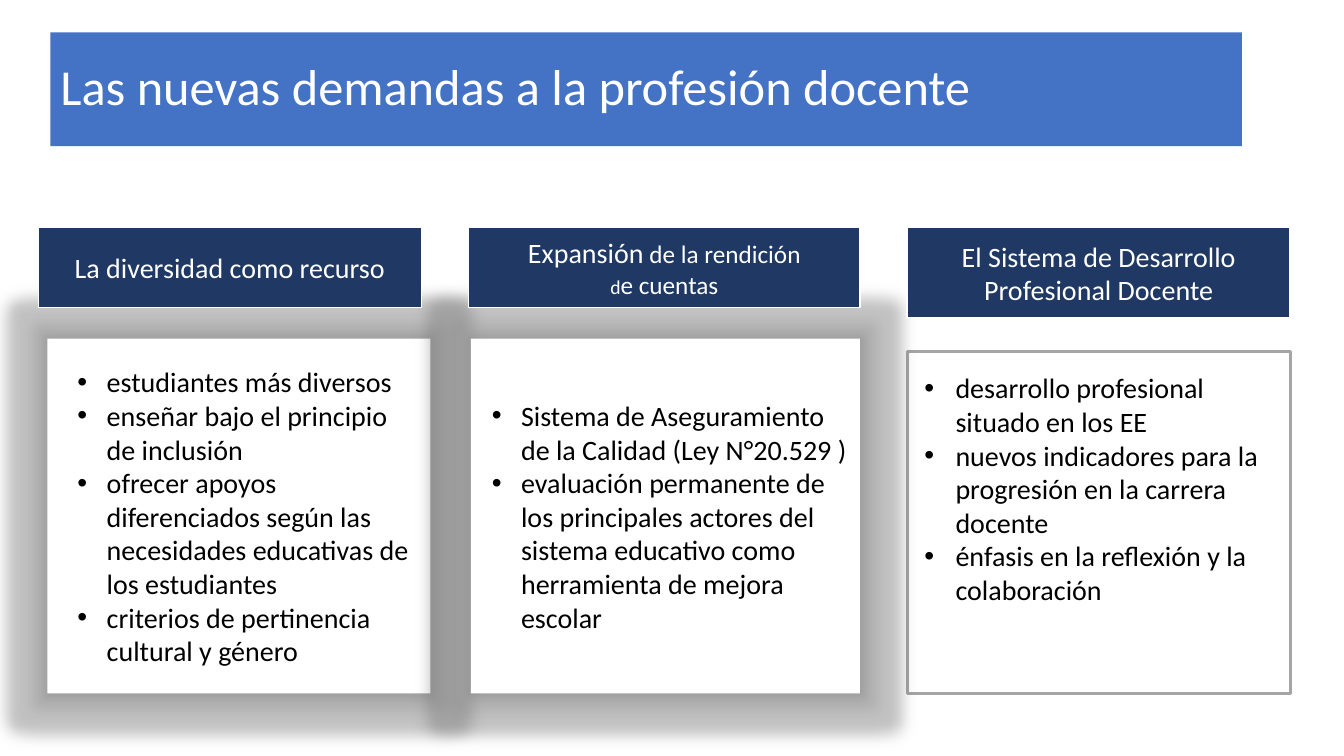
from dataclasses import dataclass
from typing import Optional

import lxml.etree
import pptx
import pptx.dml.color
import pptx.enum.shapes
import pptx.enum.text
import pptx.oxml
import pptx.oxml.ns
import pptx.shapes.autoshape
import pptx.text.text
import pptx.util

Align = pptx.enum.text.PP_ALIGN
Anchor = pptx.enum.text.MSO_ANCHOR

SLIDE_WIDTH = pptx.util.Inches(13.33)
SLIDE_HEIGHT = pptx.util.Inches(7.5)
FONT = "Calibri"
WHITE, BLACK, BLUE, NAVY, GRAY = "FFFFFF", "000000", "4472C4", "203864", "A5A5A5"
HEADER_TOP, CARD_TOP, CARD_HEIGHT = 30.13, 44.8, 46.93

HALO = f"""<a:effectLst {pptx.oxml.ns.nsdecls("a")}>
<a:glow rad="228600"><a:srgbClr val="{GRAY}"><a:alpha val="40000"/></a:srgbClr></a:glow>
<a:outerShdw blurRad="63500" sx="102000" sy="102000" algn="ctr" rotWithShape="0">
<a:srgbClr val="{BLACK}"><a:alpha val="40000"/></a:srgbClr></a:outerShdw>
</a:effectLst>"""


@dataclass(frozen=True)
class Area:
    """Position and size in percent of the slide's width and height."""

    left: float
    top: float
    width: float
    height: float

    def lengths(self) -> tuple[int, int, int, int]:
        return (
            round(SLIDE_WIDTH * self.left / 100),
            round(SLIDE_HEIGHT * self.top / 100),
            round(SLIDE_WIDTH * self.width / 100),
            round(SLIDE_HEIGHT * self.height / 100),
        )


@dataclass(frozen=True)
class Span:
    text: str
    size: float


@dataclass(frozen=True)
class Header:
    area: Area
    lines: list[list[Span]]


@dataclass(frozen=True)
class BulletList:
    area: Area
    margin: float
    hanging: float
    items: list[str]
    has_halo: bool = True


HEADERS = [
    Header(Area(2.85, HEADER_TOP, 28.5, 10.53), [[Span("La diversidad como recurso", 20)]]),
    Header(
        Area(34.88, HEADER_TOP, 29.1, 10.53),
        [
            [Span("Expansión", 20), Span(" de la rendición", 18)],
            [Span("d", 14), Span("e cuentas", 18)],
        ],
    ),
    Header(
        Area(67.5, HEADER_TOP, 28.5, 11.87),
        [[Span("El Sistema de Desarrollo Profesional Docente", 20)]],
    ),
]

BULLET_LISTS = [
    BulletList(
        Area(3.53, CARD_TOP, 28.5, CARD_HEIGHT), 0.49, 0.29,
        [
            "estudiantes más diversos",
            "enseñar bajo el principio de inclusión",
            "ofrecer apoyos diferenciados según las necesidades educativas de los estudiantes",
            "criterios de pertinencia cultural y género",
        ],
    ),
    BulletList(
        Area(35.03, CARD_TOP, 28.95, CARD_HEIGHT), 0.4, 0.29,
        [
            "Sistema de Aseguramiento de la Calidad (Ley N°20.529 )",
            "evaluación permanente de los principales actores del sistema educativo"
            " como herramienta de mejora escolar",
        ],
    ),
    BulletList(
        Area(68.03, 48.4, 28.05, 32.8), 0.31, 0.31,
        [
            "desarrollo profesional situado en los EE",
            "nuevos indicadores para la progresión en la carrera docente",
            "énfasis en la reflexión y la colaboración",
        ],
        has_halo=False,
    ),
]
FRAME = Area(67.5, 46.53, 28.5, 45.2)


def color(value: str) -> pptx.dml.color.RGBColor:
    return pptx.dml.color.RGBColor.from_string(value)


def add_box(
    page: pptx.slide.Slide,
    area: Area,
    fill: Optional[str] = None,
    line: Optional[str] = None,
    line_width: float = 1,
) -> pptx.shapes.autoshape.Shape:
    box = page.shapes.add_shape(pptx.enum.shapes.MSO_SHAPE.RECTANGLE, *area.lengths())
    box.shadow.inherit = False
    if fill:
        box.fill.solid()
        box.fill.fore_color.rgb = color(fill)
    else:
        box.fill.background()
    if line:
        box.line.color.rgb = color(line)
        box.line.width = pptx.util.Pt(line_width)
    else:
        box.line.fill.background()
    box.text_frame.word_wrap = True
    box.text_frame.vertical_anchor = Anchor.MIDDLE
    return box


def write_lines(
    frame: pptx.text.text.TextFrame,
    lines: list[list[Span]],
    font_color: str,
    alignment: Align = Align.LEFT,
) -> None:
    for index, spans in enumerate(lines):
        para = frame.add_paragraph() if index else frame.paragraphs[0]
        para.alignment = alignment
        para.font.name = FONT
        para.font.color.rgb = color(font_color)
        para.font.size = pptx.util.Pt(spans[0].size)
        for span in spans:
            run = para.add_run()
            run.text = span.text
            if span.size != spans[0].size:
                run.font.size = pptx.util.Pt(span.size)


def add_bullet(para: pptx.text.text._Paragraph, margin: float, hanging: float) -> None:
    properties = para._p.get_or_add_pPr()
    properties.set("marL", str(pptx.util.Inches(margin)))
    properties.set("indent", str(-pptx.util.Inches(hanging)))
    bullet = lxml.etree.Element(pptx.oxml.ns.qn("a:buChar"), char="•")
    typeface = lxml.etree.Element(pptx.oxml.ns.qn("a:buFont"), typeface="Arial")
    properties.insert(0, bullet)
    properties.insert(0, typeface)


def add_bullet_list(page: pptx.slide.Slide, bullets: BulletList) -> None:
    if bullets.has_halo:
        box = add_box(page, bullets.area, WHITE)
        plain = box._element.spPr.find(pptx.oxml.ns.qn("a:effectLst"))
        box._element.spPr.replace(plain, pptx.oxml.parse_xml(HALO))
    else:
        box = page.shapes.add_textbox(*bullets.area.lengths())
        box.text_frame.word_wrap = True
    write_lines(box.text_frame, [[Span(item, 20)] for item in bullets.items], BLACK)
    for para in box.text_frame.paragraphs:
        add_bullet(para, bullets.margin, bullets.hanging)


def main() -> None:
    deck = pptx.Presentation()
    deck.slide_width, deck.slide_height = SLIDE_WIDTH, SLIDE_HEIGHT
    page = deck.slides.add_slide(deck.slide_layouts[6])

    title = add_box(page, Area(3.75, 4.27, 88.65, 15.07), BLUE)
    write_lines(title.text_frame, [[Span("Las nuevas demandas a la profesión docente", 36)]], WHITE)
    title.text_frame.paragraphs[0].line_spacing = 0.9

    add_box(page, FRAME, line=GRAY, line_width=2.25)
    for bullets in BULLET_LISTS:
        add_bullet_list(page, bullets)
    for header in HEADERS:
        box = add_box(page, header.area, NAVY, WHITE)
        write_lines(box.text_frame, header.lines, WHITE, Align.CENTER)
    deck.save("out.pptx")


if __name__ == "__main__":
    main()
